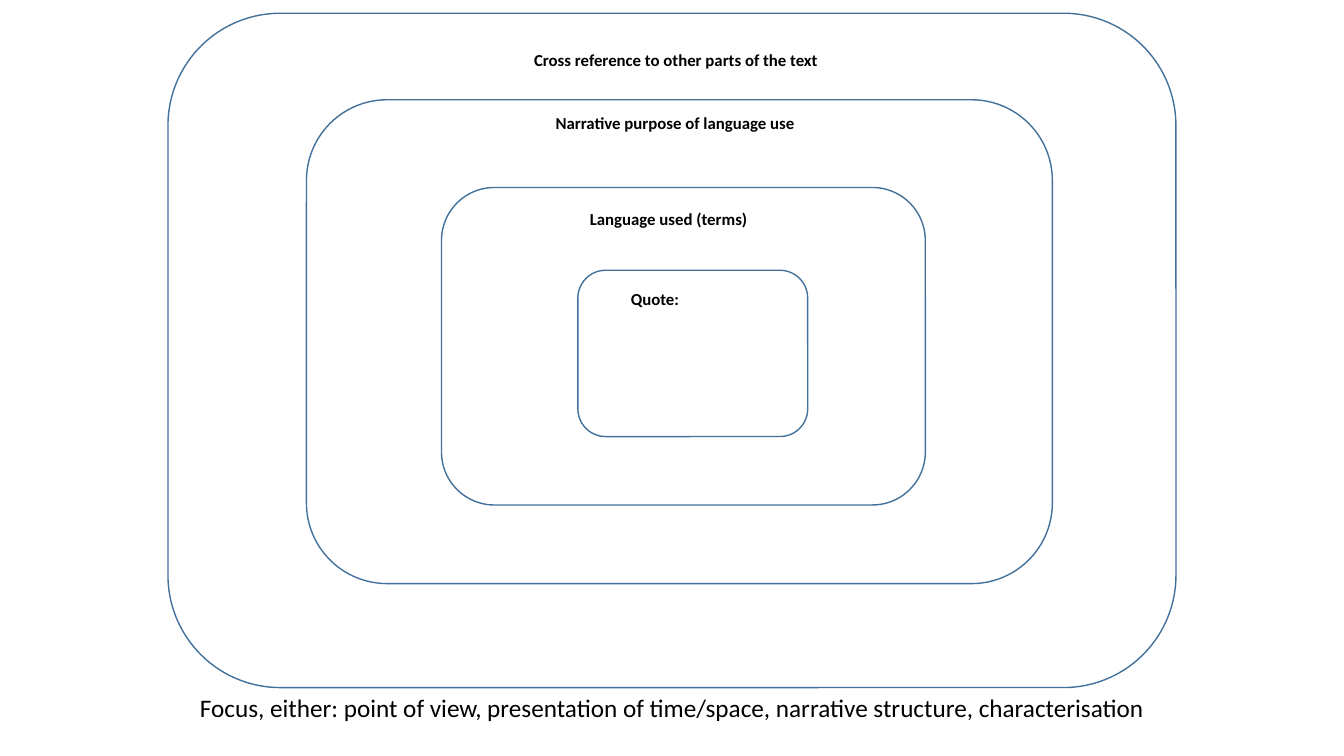
from pptx import Presentation
from pptx.dml.color import RGBColor
from pptx.enum.shapes import MSO_SHAPE
from pptx.enum.text import PP_ALIGN
from pptx.util import Inches, Pt

HUES = {"paper": "FFFFFF", "edge": "42719B", "ink": "000000"}


class Page:
    """Style and current slide; lengths are percentages of the slide's size."""
    font = "Calibri"

    def __init__(self, deck):
        self.wide, self.high = deck.slide_width, deck.slide_height
        self.slide = deck.slides.add_slide(deck.slide_layouts[6])

    def hue(self, name):
        return RGBColor.from_string(HUES[name])

    def area(self, left, top, width, height):
        return (int(self.wide * left / 100), int(self.high * top / 100),
                int(self.wide * width / 100), int(self.high * height / 100))

    def frame(self, area):
        box = self.slide.shapes.add_shape(MSO_SHAPE.ROUNDED_RECTANGLE, *self.area(*area))
        box.adjustments[0] = 1 / 6
        box.shadow.inherit = False
        box.fill.solid()
        box.fill.fore_color.rgb = self.hue("paper")
        box.line.color.rgb = self.hue("edge")
        box.line.width = Pt(1)

    def label(self, text, area, size=12, bold=True, align=PP_ALIGN.LEFT):
        body = self.slide.shapes.add_textbox(*self.area(*area)).text_frame
        body.word_wrap = True
        body.text = text
        line = body.paragraphs[0]
        line.alignment = align
        font = line.runs[0].font
        font.name, font.size, font.bold = self.font, Pt(size), bold
        font.color.rgb = self.hue("ink")


def main():
    deck = Presentation()
    deck.slide_width, deck.slide_height = Inches(13.33), Inches(7.5)
    page = Page(deck)

    # Nested frames from the outside in, each with its label's left, top, width
    rings = [
        ((12.5, 1.75, 75, 89.2), "Cross reference to other parts of the text", (39, 5.9, 25)),
        ((22.8, 13.2, 55.5, 64), "Narrative purpose of language use", (40.6, 14.3, 22)),
        ((32.85, 24.8, 36, 42), "Language used (terms)", (43.15, 27, 15)),
        ((43, 35.75, 17.1, 22), "Quote:", (46.2, 37.5, 8)),
    ]
    for area, text, spot in rings:
        page.frame(area)
        page.label(text, (*spot, 4))

    # Focus line below the frames
    page.label("Focus, either: point of view, presentation of time/space, "
               "narrative structure, characterisation",
               (12.5, 90.9, 75, 5.4), 18, False, PP_ALIGN.CENTER)

    deck.save("out.pptx")


if __name__ == "__main__":
    main()
